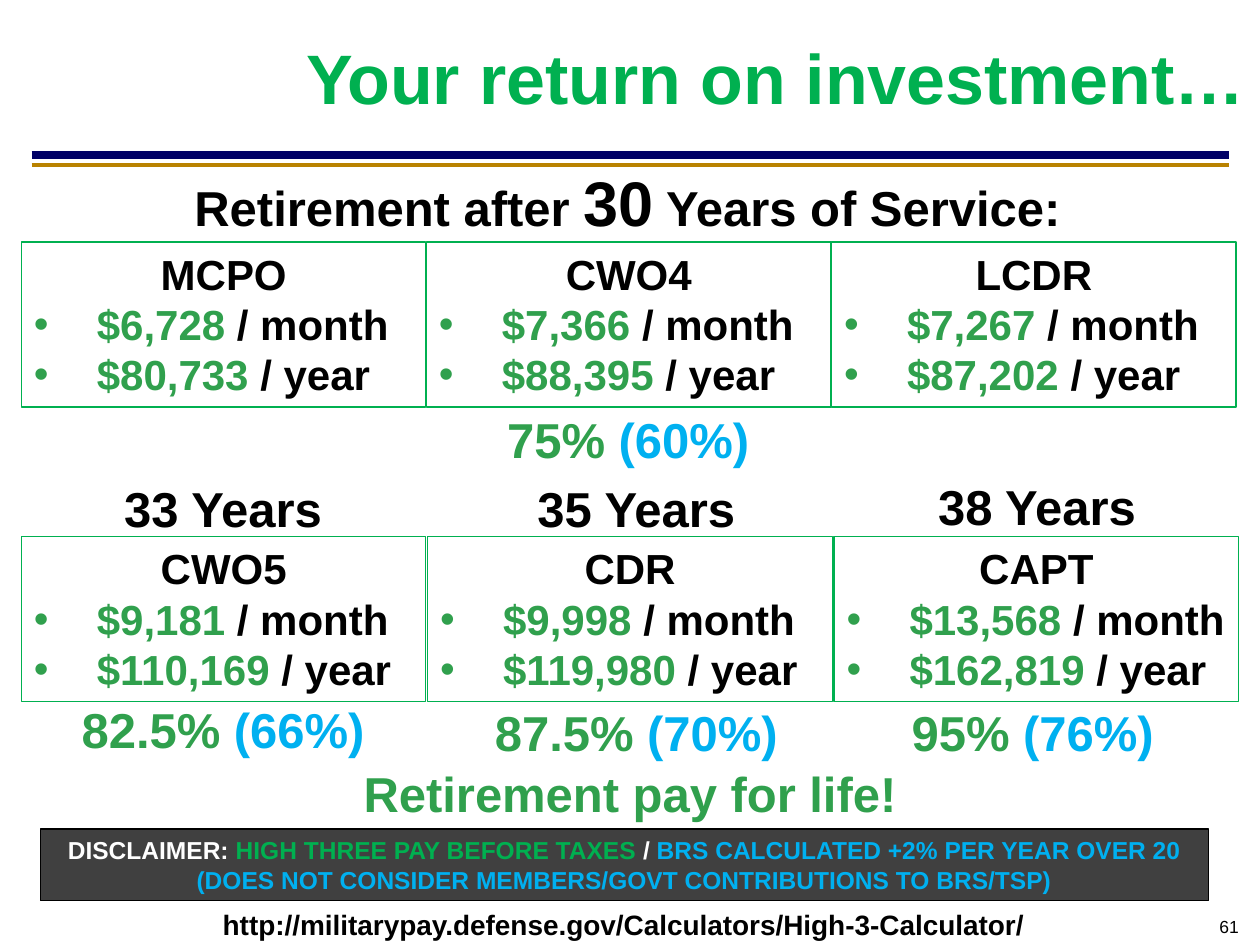
from lxml.etree import SubElement as Sub
from pptx import Presentation as Deck
from pptx.dml.color import RGBColor as Rgb
from pptx.enum.shapes import MSO_CONNECTOR as Conn, MSO_SHAPE as Geo
from pptx.enum.text import MSO_ANCHOR as Anchor, MSO_AUTO_SIZE as Fit, PP_ALIGN as Align
from pptx.oxml.ns import qn
from pptx.util import Inches, Pt

BLACK, WHITE = "000000", "FFFFFF"
GREEN, LEAF, BLUE = "00B050", "30A04D", "00B0F0"
NAVY, GOLD, GRAY = "000066", "B98200", "404040"


def color(code):
    return Rgb.from_string(code)


class Page:
    font = "Arial"

    def __init__(self, slide):
        self.slide = slide

    def rule(self, y, code, width):
        line = self.slide.shapes.add_connector(
            Conn.STRAIGHT, Inches(0.25), Inches(y), Inches(9.75), Inches(y))
        line.line.color.rgb = color(code)
        line.line.width = Pt(width)
        Sub(line._element.spPr, qn("a:effectLst"))

    def add(self, para, runs, size, align, bold=True):
        para.alignment = align
        for text, code, *own in runs:
            run = para.add_run()
            run.text = text
            font = run.font
            font.name, font.bold = self.font, bold
            font.size = Pt(own[0] if own else size)
            font.color.rgb = color(code)

    def text(self, at, runs, size=28, align=Align.CENTER, bold=True, wrap=True):
        frame = self.slide.shapes.add_textbox(*map(Inches, at)).text_frame
        frame.word_wrap = wrap
        self.add(frame.paragraphs[0], runs, size, align, bold)
        return frame

    def box(self, at, edge, fill=None):
        shape = self.slide.shapes.add_shape(Geo.RECTANGLE, *map(Inches, at))
        shape.shadow.inherit = False
        if fill:
            shape.fill.solid()
            shape.fill.fore_color.rgb = color(fill)
        else:
            shape.fill.background()
        shape.line.color.rgb = color(edge)
        shape.line.width = Pt(0.75)
        frame = shape.text_frame
        frame.word_wrap = True
        frame.auto_size = Fit.SHAPE_TO_FIT_TEXT
        frame.vertical_anchor = Anchor.TOP
        return frame

    def bullet(self, para):
        props = para._p.get_or_add_pPr()
        props.set("marL", str(Inches(0.5)))
        props.set("indent", str(-Inches(0.5)))
        Sub(props, qn("a:buFont"), typeface=self.font)
        Sub(props, qn("a:buChar"), char="•")

    def card(self, x, y, rank, month, year):
        frame = self.box((x, y, 3.21, 1.31), GREEN)
        self.add(frame.paragraphs[0], [(rank, BLACK)], 24, Align.CENTER)
        for pay, term in ((month, "/ month"), (year, "/ year")):
            para = frame.add_paragraph()
            self.bullet(para)
            self.add(para, [(pay + " ", LEAF), (term, BLACK)], 24, Align.LEFT)

    def rate(self, x, y, width, high, blend):
        self.text((x, y, width, 0.57), [(high + " ", LEAF), (blend, BLUE)], wrap=False)


def main():
    deck = Deck()
    deck.slide_width, deck.slide_height = Inches(10), Inches(7.5)
    page = Page(deck.slides.add_slide(deck.slide_layouts[6]))

    page.rule(1.23, NAVY, 4.5)
    page.rule(1.31, GOLD, 2.75)
    title = page.text((0.98, 0.22, 9, 0.77), [("Your return on investment…", GREEN)],
                      40, Align.RIGHT)
    title.vertical_anchor = Anchor.BOTTOM
    title.paragraphs[0].line_spacing = 0.85
    page.text((0.98, 1.25, 8, 0.5), [
        ("Retirement after ", BLACK), ("30", BLACK, 36), (" Years of Service:", BLACK)])

    rows = [
        (1.92, 3.215, [("MCPO", "$6,728", "$80,733"),
                       ("CWO4", "$7,366", "$88,395"),
                       ("LCDR", "$7,267", "$87,202")]),
        (4.26, 3.225, [("CWO5", "$9,181", "$110,169"),
                       ("CDR", "$9,998", "$119,980"),
                       ("CAPT", "$13,568", "$162,819")]),
    ]
    for y, step, cards in rows:
        for col, card in enumerate(cards):
            page.card(0.17 + col * step, y, *card)

    for x, y, term in ((0.77, 3.75, "33"), (4.05, 3.75, "35"), (7.23, 3.73, "38")):
        page.text((x, y, 2, 0.5), [(term + " Years", BLACK)])
    for rate in ((3.91, 3.2, 2.15, "75%", "(60%)"),
                 (0.53, 5.5, 2.48, "82.5%", "(66%)"),
                 (3.81, 5.53, 2.48, "87.5%", "(70%)"),
                 (7.12, 5.53, 2.15, "95%", "(76%)")):
        page.rate(*rate)

    page.text((2.76, 6.01, 4.48, 0.57), [("Retirement pay for life!", LEAF)], wrap=False)
    note = page.box((0.32, 6.58, 9.27, 0.57), BLACK, GRAY)
    page.add(note.paragraphs[0], [
        ("DISCLAIMER: ", WHITE), ("HIGH THREE PAY BEFORE TAXES ", GREEN), ("/ ", WHITE),
        ("BRS CALCULATED +2% PER YEAR OVER 20 "
         "(DOES NOT CONSIDER MEMBERS/GOVT CONTRIBUTIONS TO BRS/TSP)", BLUE),
    ], 14, Align.CENTER)
    page.text((0.27, 7.15, 9.36, 0.37), [
        ("http://militarypay.defense.gov/Calculators/High-3-Calculator/", BLACK)], 16)
    page.text((9.2, 7.22, 0.73, 0.28), [("61", BLACK)], 10, Align.RIGHT, False)
    deck.save("out.pptx")


if __name__ == "__main__":
    main()
